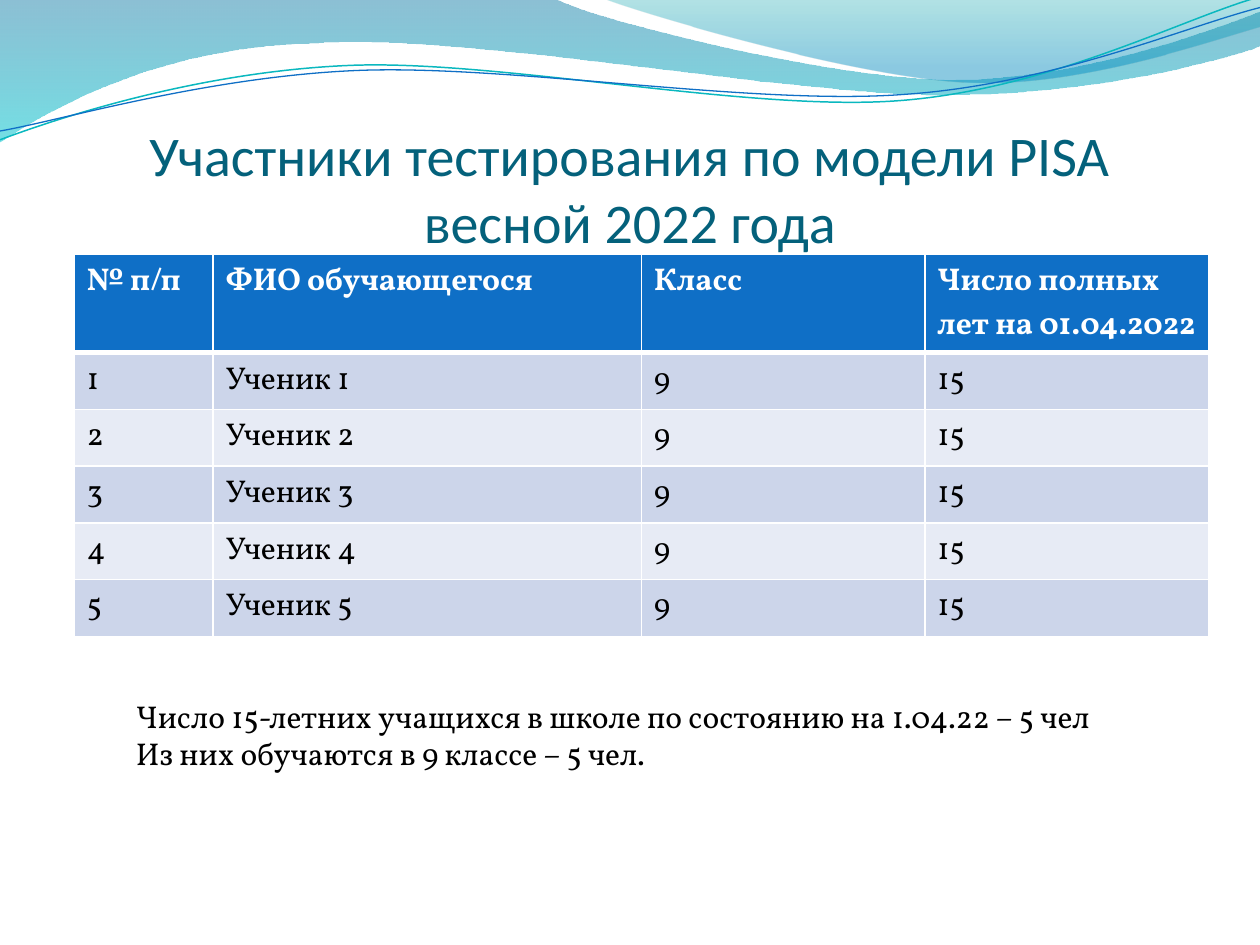
from dataclasses import dataclass

from lxml.etree import SubElement
from pptx import Presentation
from pptx.dml.color import RGBColor
from pptx.enum.text import MSO_ANCHOR, PP_ALIGN
from pptx.oxml.ns import qn
from pptx.shapes.autoshape import Shape
from pptx.slide import Slide
from pptx.table import _Cell as Cell
from pptx.text.text import TextFrame
from pptx.util import Inches, Pt

COLORS = {
    "white": "FFFFFF", "black": "000000", "title": "04617B", "header": "0F6FC6",
    "odd_row": "CCD5EA", "even_row": "E7EBF5", "teal_line": "0AB8BF", "blue_line": "0F6FC6",
    "wave_blue": "0074A1", "wave_cyan": "00C6CF", "crest_teal": "00A1A9", "crest_blue": "008BBF",
}
BODY_FONT = "Vollkorn"
HEADER_HEIGHT = 0.78
ROW_HEIGHT = 0.45


@dataclass
class Stop:
    position: float
    color: str
    opacity: int


@dataclass
class Wave:
    start: tuple
    segments: list
    stops: tuple = ()
    line_color: str = ""
    line_width: float = 0


WAVES = [
    Wave((0, 0), [
        (4.4, -0.01), (4.76, 0.17, 6.64, 0.63, 7.58, 0.63), (8.53, 0.63, 9.58, 0.26, 10, 0.09),
        (10.01, 0.36), (9.83, 0.44, 8.7, 0.76, 7.46, 0.75), (6.22, 0.75, 3.82, 0.28, 2.57, 0.34),
        (1.29, 0.36, 0.46, 0.83, -0.01, 1.13),
    ], stops=(Stop(0, "wave_blue", 45), Stop(1, "wave_cyan", 55))),
    Wave((4.79, -0.01), [
        (5.09, 0.11, 6.82, 0.62, 7.69, 0.65), (8.56, 0.69, 9.61, 0.32, 10, 0.21), (10, 0),
    ], stops=(Stop(0, "crest_teal", 30), Stop(0.8, "crest_blue", 45))),
    Wave((0, 1.11), [
        (0.48, 0.93, 1.58, 0.57, 2.77, 0.52), (3.95, 0.47, 5.93, 0.89, 7.13, 0.8),
        (8.33, 0.71, 9.38, 0.15, 9.98, -0.02),
    ], line_color="teal_line", line_width=0.85),
    Wave((0, 1.04), [
        (0.47, 0.96, 1.64, 0.61, 2.83, 0.56), (4.03, 0.51, 5.97, 0.84, 7.17, 0.75),
        (8.36, 0.67, 9.41, 0.21, 10, 0.06),
    ], line_color="blue_line", line_width=0.75),
]


def rgb(name: str) -> RGBColor:
    """Return the named colour."""
    return RGBColor.from_string(COLORS[name])


def bend_segments(shape: Shape, segments: list) -> None:
    """Turn the straight pieces that have control points into cubic curves."""
    pieces = list(shape.element.iter(qn("a:lnTo")))
    for piece, segment in zip(pieces, segments):
        if len(segment) == 2:
            continue
        piece.clear()
        piece.tag = qn("a:cubicBezTo")
        for x, y in zip(segment[::2], segment[1::2]):
            SubElement(piece, qn("a:pt"), x=str(Inches(x) - shape.left), y=str(Inches(y) - shape.top))


def fill_gradient(shape: Shape, stops: tuple) -> None:
    """Fill a shape from top to bottom with translucent stops."""
    shape.fill.gradient()
    shape.fill.gradient_angle = 270
    for gradient_stop, stop in zip(shape.fill.gradient_stops, stops):
        gradient_stop.position = stop.position
        gradient_stop.color.rgb = rgb(stop.color)
    for color, stop in zip(shape.element.spPr.iter(qn("a:srgbClr")), stops):
        SubElement(color, qn("a:alpha"), val=str(stop.opacity * 1000))


def add_wave(slide: Slide, wave: Wave) -> None:
    """Draw one filled or outlined wave."""
    corners = [wave.start] + [segment[-2:] for segment in wave.segments]
    points = [(Inches(x), Inches(y)) for x, y in corners]
    builder = slide.shapes.build_freeform(*points[0])
    builder.add_line_segments(points[1:], close=bool(wave.stops))
    shape = builder.convert_to_shape()
    bend_segments(shape, wave.segments)
    shape.shadow.inherit = False
    if wave.stops:
        fill_gradient(shape, wave.stops)
        shape.line.fill.background()
    else:
        shape.fill.background()
        shape.line.color.rgb = rgb(wave.line_color)
        shape.line.width = Pt(wave.line_width)


def format_text(text_frame: TextFrame, font_name: str, size: int, color: str, bold: bool = False) -> None:
    """Apply one font to every run of a text frame."""
    for paragraph in text_frame.paragraphs:
        for run in paragraph.runs:
            run.font.name = font_name
            run.font.size = Pt(size)
            run.font.bold = bold
            run.font.color.rgb = rgb(color)


def add_text(slide: Slide, text: str, left: float, top: float, width: float, height: float) -> TextFrame:
    """Add a wrapping text box and return its text frame."""
    text_box = slide.shapes.add_textbox(Inches(left), Inches(top), Inches(width), Inches(height))
    text_box.text_frame.word_wrap = True
    text_box.text_frame.text = text
    return text_box.text_frame


def set_borders(cell: Cell, bottom_width: int) -> None:
    """Give a cell white borders."""
    properties = cell._tc.get_or_add_tcPr()
    for side, width in (("L", 1), ("R", 1), ("T", 1), ("B", bottom_width)):
        line = SubElement(properties, qn(f"a:ln{side}"), w=str(Pt(width)))
        SubElement(SubElement(line, qn("a:solidFill")), qn("a:srgbClr"), val=COLORS["white"])


def add_title(slide: Slide) -> None:
    """Add the centred slide title."""
    title = add_text(slide, "Участники тестирования по модели PISA весной 2022 года", 0.5, 0.77, 9, 1.25)
    title.margin_left = title.margin_right = title.margin_bottom = 0
    title.vertical_anchor = MSO_ANCHOR.BOTTOM
    title.paragraphs[0].alignment = PP_ALIGN.CENTER
    format_text(title, "Calibri", 32, "title")


def add_pupil_table(slide: Slide) -> None:
    """Add the table of tested pupils."""
    rows = [("№ п/п", "ФИО обучающегося", "Класс", "Число полных лет на 01.04.2022")]
    rows += [(str(number), f"Ученик {number}", "9", "15") for number in range(1, 6)]
    widths = (1.1, 3.4, 2.25, 2.25)
    height = HEADER_HEIGHT + ROW_HEIGHT * (len(rows) - 1)
    table = slide.shapes.add_table(
        len(rows), len(widths), Inches(0.59), Inches(2.02), Inches(9), Inches(height)
    ).table
    for column, width in zip(table.columns, widths):
        column.width = Inches(width)
    for row_index, row in enumerate(rows):
        is_header = row_index == 0
        table.rows[row_index].height = Inches(HEADER_HEIGHT if is_header else ROW_HEIGHT)
        fill = "header" if is_header else ("odd_row" if row_index % 2 else "even_row")
        for column_index, text in enumerate(row):
            cell = table.cell(row_index, column_index)
            cell.text_frame.text = text
            format_text(cell.text_frame, BODY_FONT, 18, "white" if is_header else "black", is_header)
            set_borders(cell, 3 if is_header else 1)
            cell.fill.solid()
            cell.fill.fore_color.rgb = rgb(fill)


def main() -> None:
    """Build and save the slide."""
    presentation = Presentation()
    presentation.slide_width = Inches(10)
    presentation.slide_height = Inches(7.5)
    slide = presentation.slides.add_slide(presentation.slide_layouts[6])
    for wave in WAVES:
        add_wave(slide, wave)
    add_title(slide)
    add_pupil_table(slide)
    summary = add_text(
        slide,
        "Число 15-летних учащихся в школе по состоянию на 1.04.22 – 5 чел\nИз них обучаются в 9 классе – 5 чел.",
        0.98, 5.48, 8.03, 0.71,
    )
    format_text(summary, BODY_FONT, 18, "black")
    presentation.save("out.pptx")


if __name__ == "__main__":
    main()
